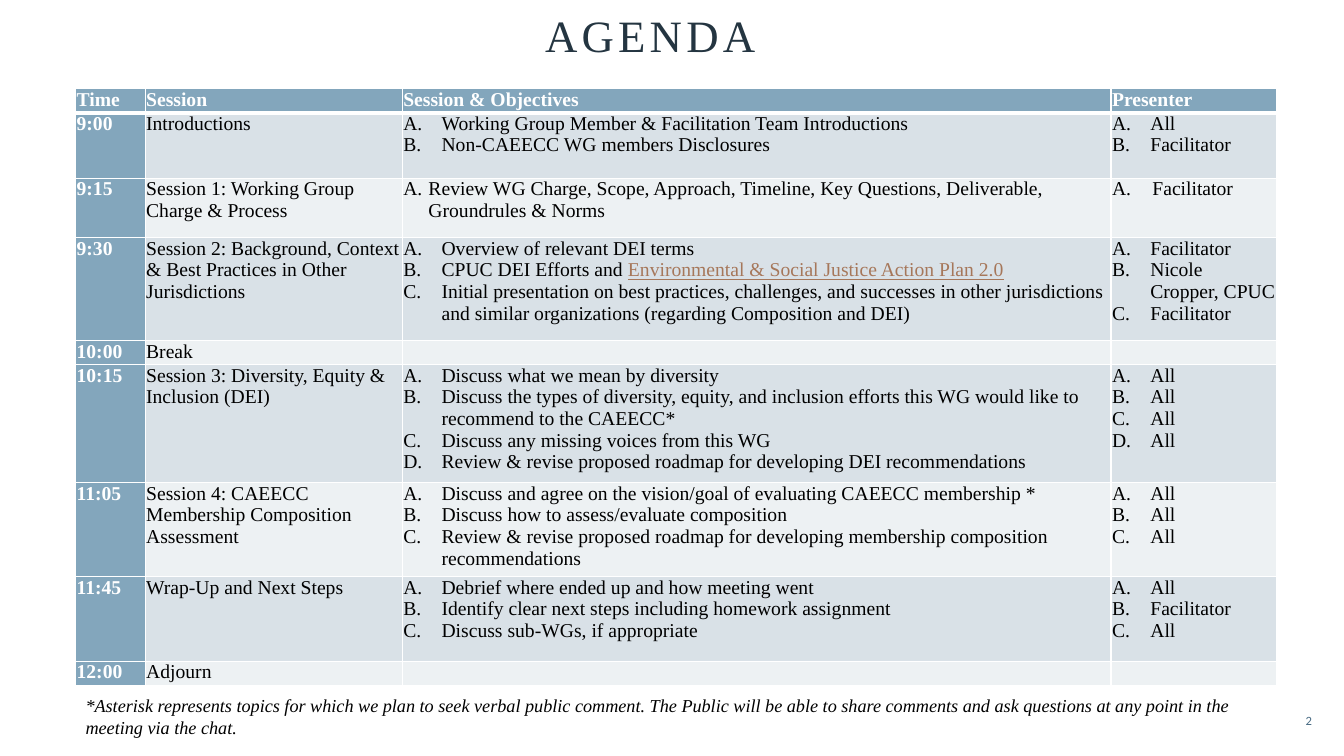
from lxml import etree
from pptx import Presentation
from pptx.dml.color import RGBColor
from pptx.enum import text
from pptx.oxml import ns
from pptx.util import Inches, Pt

SERIF = "Times New Roman"
WHITE = RGBColor(0xFF, 0xFF, 0xFF)
BLACK = RGBColor(0, 0, 0)
NAVY = RGBColor(0x24, 0x35, 0x41)
SLATE = RGBColor(0x48, 0x6B, 0x83)
HEADER_BLUE = RGBColor(0x83, 0xA6, 0xBC)
BAND_DARK = RGBColor(0xD9, 0xE1, 0xE7)
BAND_LIGHT = RGBColor(0xED, 0xF1, 0xF3)
LINK_BROWN = RGBColor(0xA6, 0x77, 0x5A)

PLAN_NAME = "Environmental & Social Justice Action Plan 2.0"
HEADINGS = ["Time", "Session", "Session & Objectives", "Presenter"]
COLUMN_WIDTHS = [0.69, 2.55, 7.03, 1.64]
HEADER_HEIGHT = 0.24
LIST_INDENT = 0.38

# Row height, time, session, objectives, presenters
AGENDA = [
    (0.65, "9:00", "Introductions",
     ["Working Group Member & Facilitation Team Introductions",
      "Non-CAEECC WG members Disclosures"],
     ["All", "Facilitator"]),
    (0.59, "9:15", "Session 1: Working Group Charge & Process",
     ["Review WG Charge, Scope, Approach, Timeline, Key Questions, "
      "Deliverable, Groundrules & Norms"],
     ["Facilitator"]),
    (1.02, "9:30",
     "Session 2: Background, Context & Best Practices in Other Jurisdictions",
     ["Overview of relevant DEI terms",
      "CPUC DEI Efforts and " + PLAN_NAME,
      "Initial presentation on best practices, challenges, and successes in "
      "other jurisdictions and similar organizations (regarding Composition "
      "and DEI)"],
     ["Facilitator", "Nicole Cropper, CPUC", "Facilitator"]),
    (0.24, "10:00", "Break", [], []),
    (1.17, "10:15", "Session 3: Diversity, Equity & Inclusion (DEI)",
     ["Discuss what we mean by diversity",
      "Discuss the types of diversity, equity, and inclusion efforts this WG "
      "would like to recommend to the CAEECC*",
      "Discuss any missing voices from this WG",
      "Review & revise proposed roadmap for developing DEI recommendations"],
     ["All"] * 4),
    (0.93, "11:05", "Session 4: CAEECC Membership Composition Assessment",
     ["Discuss and agree on the vision/goal of evaluating CAEECC membership *",
      "Discuss how to assess/evaluate composition",
      "Review & revise proposed roadmap for developing membership composition "
      "recommendations"],
     ["All"] * 3),
    (0.84, "11:45", "Wrap-Up and Next Steps",
     ["Debrief where ended up and how meeting went",
      "Identify clear next steps including homework assignment",
      "Discuss sub-WGs, if appropriate"],
     ["All", "Facilitator", "All"]),
    (0.24, "12:00", "Adjourn", [], []),
]
# Session 1 has its own list indents: objectives, presenters
SESSION_INDENTS = {"9:15": (0.25, 0.4)}

FOOTNOTE = ("*Asterisk represents topics for which we plan to seek verbal "
            "public comment. The Public will be able to share comments and ask "
            "questions at any point in the meeting via the chat.")


def add_span(para, words, size, color, font=SERIF, bold=False, italic=False,
             underline=False, spacing=0):
    span = para.add_run()
    span.text = words
    span.font.name = font
    span.font.size = Pt(size)
    span.font.color.rgb = color
    span.font.bold = bold
    span.font.italic = italic
    span.font.underline = underline
    if spacing:
        span.font._element.set("spc", str(spacing * 100))


def add_text_box(page, left, top, width, height):
    """Add a wrapping text box and return its text frame."""
    box = page.shapes.add_textbox(
        Inches(left), Inches(top), Inches(width), Inches(height))
    box.text_frame.word_wrap = True
    return box.text_frame


def add_title(page):
    title = page.shapes.title
    title.left, title.top = Inches(1.26), Inches(0.07)
    title.width, title.height = Inches(10.38), Inches(0.61)
    title.text_frame.vertical_anchor = text.MSO_ANCHOR.MIDDLE
    para = title.text_frame.paragraphs[0]
    para.alignment = text.PP_ALIGN.CENTER
    para.line_spacing = 0.9
    add_span(para, "AGENDA", 32, NAVY, spacing=3)


def add_borders(cell, bottom):
    properties = cell._tc.get_or_add_tcPr()
    for side, points in (("L", 1), ("R", 1), ("T", 1), ("B", bottom)):
        line = etree.SubElement(properties, ns.qn("a:ln" + side),
                                w=str(Pt(points)))
        fill = etree.SubElement(line, ns.qn("a:solidFill"))
        etree.SubElement(fill, ns.qn("a:srgbClr"), val=str(WHITE))


def format_cell(cell, fill, bottom=1):
    cell.margin_left = cell.margin_right = Inches(0.01)
    cell.margin_top = cell.margin_bottom = 0
    add_borders(cell, bottom)
    cell.fill.solid()
    cell.fill.fore_color.rgb = fill


def write_label(cell, words, color=WHITE, bold=True):
    add_span(cell.text_frame.paragraphs[0], words, 14, color, bold=bold)


def letter_paragraph(para, indent):
    """Number a paragraph A., B., C. with a hanging indent."""
    properties = para._p.get_or_add_pPr()
    properties.set("marL", str(Inches(indent)))
    properties.set("indent", str(-Inches(indent)))
    etree.SubElement(properties, ns.qn("a:buFont"), typeface="+mj-lt")
    etree.SubElement(properties, ns.qn("a:buAutoNum"), type="alphaUcPeriod")


def write_list(cell, items, indent):
    frame = cell.text_frame
    if not items:
        etree.SubElement(frame.paragraphs[0]._p, ns.qn("a:endParaRPr"),
                         sz="1400")
    for index, item in enumerate(items):
        para = frame.add_paragraph() if index else frame.paragraphs[0]
        letter_paragraph(para, indent)
        plain, plan, _ = item.partition(PLAN_NAME)
        add_span(para, plain, 14, BLACK)
        if plan:
            add_span(para, plan, 14, LINK_BROWN, underline=True)


def add_agenda(page):
    heights = [HEADER_HEIGHT] + [entry[0] for entry in AGENDA]
    table = page.shapes.add_table(
        len(heights), len(COLUMN_WIDTHS), Inches(0.75), Inches(0.88),
        Inches(sum(COLUMN_WIDTHS)), Inches(sum(heights))).table
    for column, width in zip(table.columns, COLUMN_WIDTHS):
        column.width = Inches(width)
    for row, height in zip(table.rows, heights):
        row.height = Inches(height)

    for cell, heading in zip(table.rows[0].cells, HEADINGS):
        format_cell(cell, HEADER_BLUE, bottom=3)
        write_label(cell, heading)

    for number, entry in enumerate(AGENDA, start=1):
        _, time, session, objectives, presenters = entry
        band = BAND_DARK if number % 2 else BAND_LIGHT
        cells = list(table.rows[number].cells)
        for cell, fill in zip(cells, [HEADER_BLUE, band, band, band]):
            format_cell(cell, fill)
        indents = SESSION_INDENTS.get(time, (LIST_INDENT, LIST_INDENT))
        write_label(cells[0], time)
        write_label(cells[1], session, BLACK, bold=False)
        write_list(cells[2], objectives, indents[0])
        write_list(cells[3], presenters, indents[1])


def add_footnote(page):
    frame = add_text_box(page, 0.75, 6.84, 11.72, 0.32)
    add_span(frame.paragraphs[0], FOOTNOTE, 13, BLACK, italic=True)


def add_page_number(page):
    frame = add_text_box(page, 12.16, 6.95, 0.95, 0.4)
    frame.vertical_anchor = text.MSO_ANCHOR.MIDDLE
    para = frame.paragraphs[0]
    para.alignment = text.PP_ALIGN.RIGHT
    para.space_after = Pt(6)
    add_span(para, "2", 9, SLATE, font="Calibri", spacing=3)


def main():
    deck = Presentation()
    deck.slide_width, deck.slide_height = Inches(13.33), Inches(7.5)
    page = deck.slides.add_slide(deck.slide_layouts.get_by_name("Title Only"))
    add_title(page)
    add_page_number(page)
    add_footnote(page)
    add_agenda(page)
    deck.save("out.pptx")


if __name__ == "__main__":
    main()
